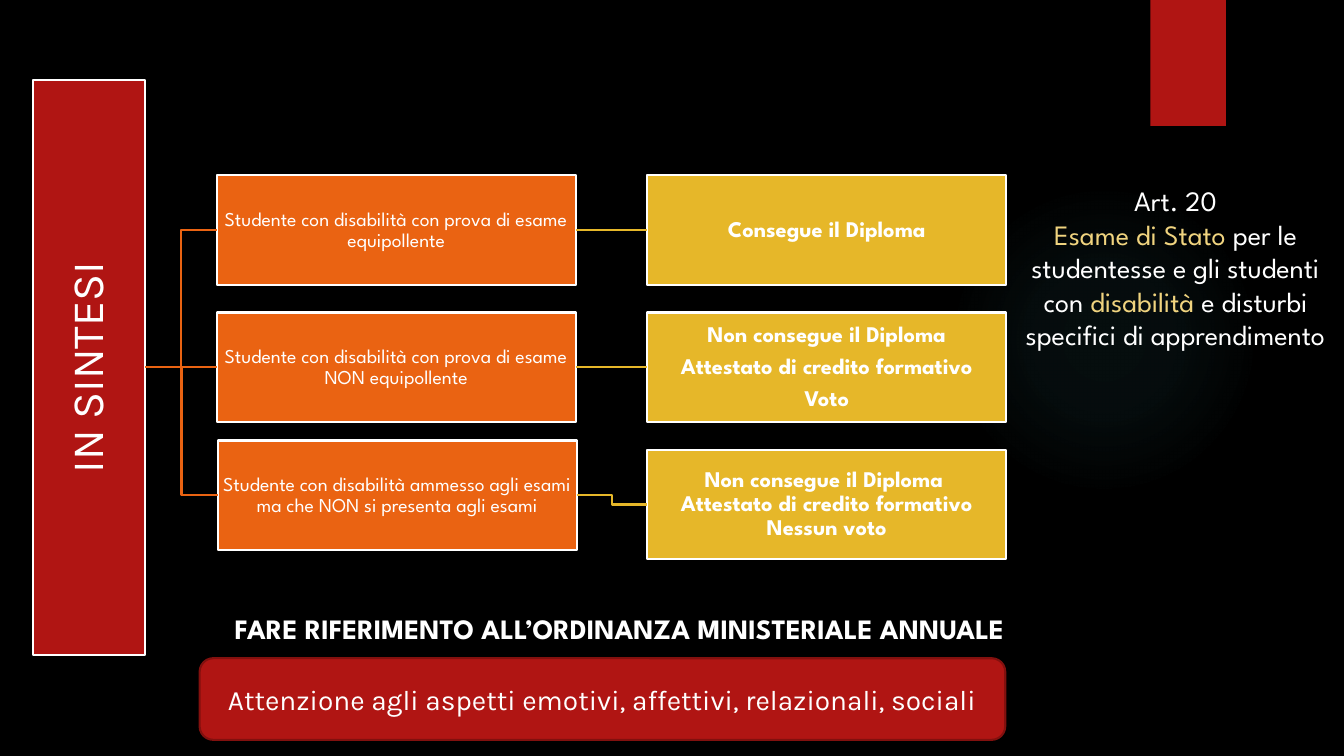
from lxml import etree
from pptx import Presentation
from pptx.dml.color import RGBColor
from pptx.enum.shapes import MSO_CONNECTOR, MSO_SHAPE
from pptx.enum.text import MSO_ANCHOR, MSO_AUTO_SIZE, PP_ALIGN
from pptx.oxml import parse_xml
from pptx.oxml.ns import qn
from pptx.util import Inches, Pt

BLACK = RGBColor(0x00, 0x00, 0x00)
WHITE = RGBColor(0xFF, 0xFF, 0xFF)
RED = RGBColor(0xB0, 0x15, 0x13)
DARK_RED = RGBColor(0x82, 0x10, 0x0E)
ORANGE = RGBColor(0xEA, 0x63, 0x12)
GOLD = RGBColor(0xE6, 0xB7, 0x29)
PALE_GOLD = RGBColor(0xF0, 0xD4, 0x7F)
GLOW = RGBColor(0x50, 0xB9, 0xC1)
RECTANGLE, ROUNDED, ELLIPSE = MSO_SHAPE.RECTANGLE, MSO_SHAPE.ROUNDED_RECTANGLE, MSO_SHAPE.OVAL
STRAIGHT, ELBOW = MSO_CONNECTOR.STRAIGHT, MSO_CONNECTOR.ELBOW
LEFT_SIDE, RIGHT_SIDE = 1, 3
SPARTAN, KARLA = "League Spartan", "Karla"

deck = Presentation()
deck.slide_width, deck.slide_height = Inches(13.33), Inches(7.5)
page = deck.slides.add_slide(deck.slide_layouts[6])
page.background.fill.solid()
page.background.fill.fore_color.rgb = BLACK


def add_block(kind, left, top, width, height, fill, line=None):
    block = page.shapes.add_shape(kind, Inches(left), Inches(top), Inches(width), Inches(height))
    block.shadow.inherit = False
    block.fill.solid()
    block.fill.fore_color.rgb = fill
    if line is None:
        block.line.fill.background()
    else:
        block.line.color.rgb = line
        block.line.width = Pt(1.5)
    return block


def write(shape, paragraphs, size, font, bold=False, margin=None, space_after=None):
    """Fill a shape with centred paragraphs, each a list of (text, colour) spans."""
    frame = shape.text_frame
    frame.word_wrap = True
    if margin is not None:
        frame.margin_left = frame.margin_right = Inches(margin)
        frame.margin_top = frame.margin_bottom = Inches(margin)
    for index, spans in enumerate(paragraphs):
        para = frame.paragraphs[0] if index == 0 else frame.add_paragraph()
        para.alignment = PP_ALIGN.CENTER
        if space_after is not None:
            para.line_spacing = 0.9
            para.space_after = Pt(space_after)
        para.text = "".join(text for text, _ in spans) if len(spans) == 1 else ""
        for text, colour in spans:
            if len(spans) > 1:
                para.add_run().text = text
            for span in para.runs[-1:] if len(spans) > 1 else para.runs:
                span.font.name = font
                span.font.size = Pt(size)
                span.font.bold = bold
                span.font.color.rgb = colour


# Background glow and corner tab
glow = add_block(ELLIPSE, 9.41, 1.83, 3.08, 3.08, GLOW)
stops = "".join(
    f'<a:gs pos="{place * 1000}"><a:srgbClr val="{GLOW}"><a:alpha val="{opacity * 1000}"/></a:srgbClr></a:gs>'
    for place, opacity in ((0, 7), (36, 6), (69, 0), (100, 0)))
gradient = parse_xml(
    '<a:gradFill xmlns:a="http://schemas.openxmlformats.org/drawingml/2006/main">'
    f'<a:gsLst>{stops}</a:gsLst><a:path path="circle">'
    '<a:fillToRect l="50000" t="50000" r="50000" b="50000"/></a:path></a:gradFill>')
glow_properties = glow._element.spPr
glow_properties.replace(glow_properties.find(qn("a:solidFill")), gradient)
add_block(RECTANGLE, 11.41, 0, 0.75, 1.25, RED)

# Diagram: one root, three cases, three outcomes
root = add_block(RECTANGLE, 0.33, 0.79, 1.11, 5.71, RED, WHITE)
root.text_frame.vertical_anchor = MSO_ANCHOR.MIDDLE
root._element.txBody.find(qn("a:bodyPr")).set("vert", "vert270")
write(root, [[("IN SINTESI", WHITE)]], 32, KARLA, margin=0.02, space_after=11)

BOX_WIDTH, BOX_HEIGHT = 3.56, 1.09
rows = [
    (2.15, 1.74, "Studente con disabilità con prova di esame equipollente",
     1.74, ["Consegue il Diploma"]),
    (2.15, 3.1, "Studente con disabilità con prova di esame NON equipollente",
     3.1, ["Non consegue il Diploma", "Attestato di credito formativo", "Voto"]),
    (2.16, 4.37, "Studente con disabilità ammesso agli esami ma che NON si presenta agli esami",
     4.46, ["Non consegue il Diploma \vAttestato di credito formativo\vNessun voto"]),
]
for case_left, case_top, case_text, outcome_top, outcome_lines in rows:
    case = add_block(RECTANGLE, case_left, case_top, BOX_WIDTH, BOX_HEIGHT, ORANGE, WHITE)
    write(case, [[(case_text, WHITE)]], 14, SPARTAN, margin=0.01, space_after=5)
    outcome = add_block(RECTANGLE, 6.42, outcome_top, BOX_WIDTH, BOX_HEIGHT, GOLD, WHITE)
    write(outcome, [[(line, WHITE)] for line in outcome_lines], 16, SPARTAN,
          bold=True, margin=0.01, space_after=5.6)
    for start, end, colour, kind in (
            (root, case, ORANGE, STRAIGHT if case_top == 3.1 else ELBOW),
            (case, outcome, GOLD, STRAIGHT if case_top == outcome_top else ELBOW)):
        link = page.shapes.add_connector(kind, 0, 0, 0, 0)
        link.begin_connect(start, RIGHT_SIDE)
        link.end_connect(end, LEFT_SIDE)
        link.line.color.rgb = colour
        link.line.width = Pt(1.5)
        etree.SubElement(link._element.spPr, qn("a:effectLst"))

# Side text and closing notes
article = page.shapes.add_textbox(Inches(9.98), Inches(1.77), Inches(3.36), Inches(3.32))
write(article, [
    [("Art. 20", WHITE)],
    [("Esame di Stato ", PALE_GOLD), ("per le studentesse e gli studenti con ", WHITE),
     ("disabilità", PALE_GOLD), (" e disturbi specifici di apprendimento", WHITE)],
], 20, SPARTAN)

reference = page.shapes.add_textbox(Inches(1.59), Inches(6.02), Inches(9.11), Inches(0.44))
reference.text_frame.auto_size = MSO_AUTO_SIZE.SHAPE_TO_FIT_TEXT
write(reference, [[("FARE RIFERIMENTO ALL’ORDINANZA MINISTERIALE ANNUALE", WHITE)]],
      20, SPARTAN, bold=True)

warning = add_block(ROUNDED, 1.98, 6.53, 7.99, 0.81, RED, DARK_RED)
write(warning, [[("Attenzione agli aspetti emotivi, affettivi, relazionali, sociali", WHITE)]],
      20, KARLA)

deck.save("out.pptx")
